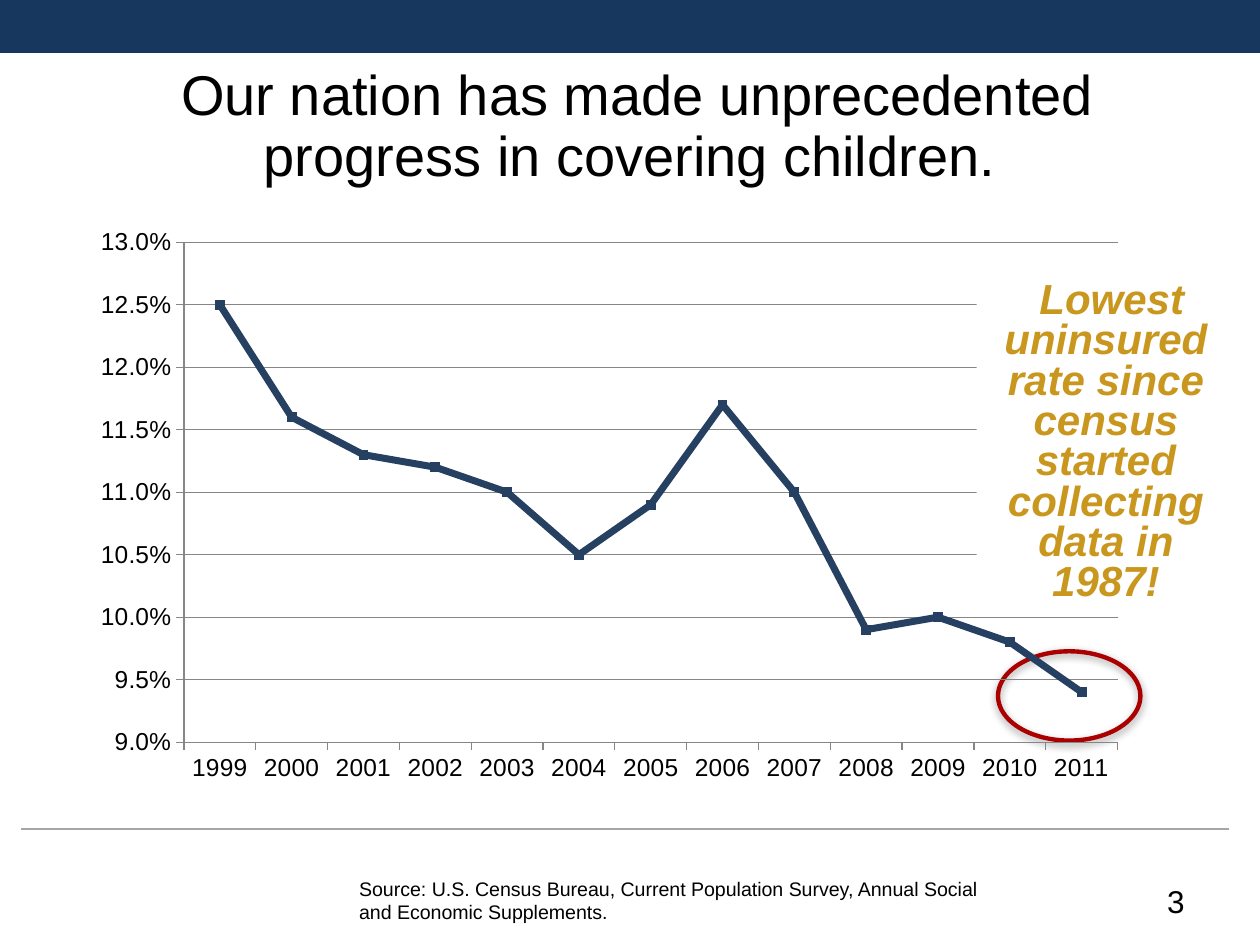
from dataclasses import dataclass

from lxml import etree
from pptx import Presentation
from pptx.chart.data import CategoryChartData
from pptx.dml.color import RGBColor
from pptx.enum.chart import XL_CHART_TYPE, XL_MARKER_STYLE, XL_TICK_MARK
from pptx.enum.shapes import MSO_CONNECTOR, MSO_SHAPE
from pptx.enum.text import MSO_ANCHOR, MSO_AUTO_SIZE, PP_ALIGN
from pptx.oxml import parse_xml
from pptx.oxml.ns import nsdecls, qn
from pptx.util import Cm, Pt

NAVY = RGBColor(0x17, 0x37, 0x5E)
BLUE = RGBColor(0x25, 0x40, 0x61)
GOLD = RGBColor(0xC9, 0x96, 0x1E)
RED = RGBColor(0xAA, 0x00, 0x00)
GRAY = RGBColor(0xA6, 0xA6, 0xA6)
AXIS = RGBColor(0x86, 0x86, 0x86)
BLACK = RGBColor(0, 0, 0)
WHITE = RGBColor(0xFF, 0xFF, 0xFF)

LEFT, CENTER, RIGHT = PP_ALIGN.LEFT, PP_ALIGN.CENTER, PP_ALIGN.RIGHT
TOP, MIDDLE = MSO_ANCHOR.TOP, MSO_ANCHOR.MIDDLE
RECT, OVAL = MSO_SHAPE.RECTANGLE, MSO_SHAPE.OVAL
LINE = XL_CHART_TYPE.LINE_MARKERS
SQUARE = XL_MARKER_STYLE.SQUARE
OUT, NONE = XL_TICK_MARK.OUTSIDE, XL_TICK_MARK.NONE
STRAIGHT = MSO_CONNECTOR.STRAIGHT
FIXED = MSO_AUTO_SIZE.NONE
FONT = "Arial"

YEARS = [str(year) for year in range(1999, 2012)]
RATES = [0.125, 0.116, 0.113, 0.112, 0.11, 0.105, 0.109,
         0.117, 0.11, 0.099, 0.1, 0.098, 0.094]


@dataclass(frozen=True)
class Box:
    left: float
    top: float
    width: float
    height: float

    def size(self) -> tuple:
        return Cm(self.left), Cm(self.top), Cm(self.width), Cm(self.height)


@dataclass(frozen=True)
class Label:
    text: str
    size: float
    color: RGBColor = BLACK
    align: PP_ALIGN = LEFT
    anchor: MSO_ANCHOR = TOP
    space: float = 1.0
    strong: bool = False


NOTES = [
    (Box(6.99, 17.55, 13.54, 1.07),
     Label("Source: U.S. Census Bureau, Current Population Survey, "
           "Annual Social and Economic Supplements.", 11.2)),
    (Box(18.21, 17.65, 5.92, 1.02), Label("3", 18, align=RIGHT)),
]
TITLE = Label(" Our nation has made unprecedented progress in covering children.",
              32, align=CENTER, anchor=MIDDLE, space=0.9)
CLAIM = Label(" Lowest uninsured rate since census started collecting data in 1987!",
              24, GOLD, CENTER, MIDDLE, 0.8, True)


def write(shape, label: Label) -> None:
    frame = shape.text_frame
    frame.text = label.text
    frame.word_wrap = True
    frame.auto_size = FIXED
    frame.vertical_anchor = label.anchor
    para = frame.paragraphs[0]
    para.alignment = label.align
    para.line_spacing = label.space
    font = para.runs[0].font
    font.name = FONT
    font.size = Pt(label.size)
    font.color.rgb = label.color
    font.bold = font.italic = label.strong


def add_rect(slide, box: Box, fill: RGBColor):
    rect = slide.shapes.add_shape(RECT, *box.size())
    rect.shadow.inherit = False
    rect.fill.solid()
    rect.fill.fore_color.rgb = fill
    rect.line.fill.background()
    return rect


def add_rule(slide, left: float, right: float, top: float) -> None:
    rule = slide.shapes.add_connector(STRAIGHT, Cm(left), Cm(top), Cm(right), Cm(top))
    rule.line.color.rgb = GRAY
    rule.line.width = Pt(0.75)
    etree.SubElement(rule._element.spPr, qn("a:effectLst"))


def add_ring(slide, box: Box) -> None:
    ring = slide.shapes.add_shape(OVAL, *box.size())
    ring.shadow.inherit = False
    ring.fill.background()
    ring.line.color.rgb = RED
    ring.line.width = Pt(2.5)
    ring._element.spPr.find(qn("a:effectLst")).append(parse_xml(
        f'<a:outerShdw {nsdecls("a")} blurRad="{Pt(5)}" dist="{Pt(1.6)}" '
        'dir="5400000" rotWithShape="0"><a:srgbClr val="000000">'
        '<a:alpha val="38000"/></a:srgbClr></a:outerShdw>'))


def set_plot(chart, box: Box) -> None:
    area = chart._chartSpace.chart.plotArea
    old = area.find(qn("c:layout"))
    if old is not None:
        area.remove(old)
    layout = etree.Element(qn("c:layout"))
    manual = etree.SubElement(layout, qn("c:manualLayout"))
    parts = [("layoutTarget", "inner"), ("xMode", "edge"), ("yMode", "edge"),
             ("x", box.left), ("y", box.top), ("w", box.width), ("h", box.height)]
    for name, value in parts:
        etree.SubElement(manual, qn(f"c:{name}")).set("val", str(value))
    area.insert(0, layout)


def add_trend(slide, box: Box) -> None:
    data = CategoryChartData(number_format="0.0%")
    data.categories = YEARS
    data.add_series("Series 1", RATES)
    chart = slide.shapes.add_chart(LINE, *box.size(), data).chart
    chart.has_legend = chart.has_title = False
    chart.font.name = FONT
    chart.font.size = Pt(14)
    chart.font.color.rgb = BLACK
    set_plot(chart, Box(0.114, 0.037, 0.88, 0.861))

    for axis in (chart.category_axis, chart.value_axis):
        axis.major_tick_mark = OUT
        axis.minor_tick_mark = NONE
        axis.format.line.color.rgb = AXIS
        axis.format.line.width = Pt(0.75)
    rate = chart.value_axis
    rate.minimum_scale, rate.maximum_scale, rate.major_unit = 0.09, 0.13, 0.005
    rate.tick_labels.number_format = "0.0%"
    rate.tick_labels.number_format_is_linked = False
    rate.has_major_gridlines = True
    rate.major_gridlines.format.line.color.rgb = AXIS
    rate.major_gridlines.format.line.width = Pt(0.75)

    chart.plots[0].vary_by_categories = False
    trend = chart.plots[0].series[0]
    trend.smooth = False
    trend.format.line.color.rgb = BLUE
    trend.format.line.width = Pt(4)
    mark = trend.marker
    mark.style = SQUARE
    mark.size = 5
    mark.format.fill.solid()
    mark.format.fill.fore_color.rgb = BLUE
    mark.format.line.color.rgb = BLUE


def main() -> None:
    deck = Presentation()
    deck.slide_width, deck.slide_height = Cm(25.4), Cm(19.05)
    slide = deck.slides.add_slide(deck.slide_layouts[5])

    add_rect(slide, Box(0, 0, 25.4, 1.07), NAVY)
    add_rule(slide, 0.43, 24.77, 16.71)
    add_ring(slide, Box(20.12, 13.13, 2.87, 1.8))

    title = slide.shapes.title
    title.left, title.top, title.width, title.height = Box(1.27, 1.14, 22.86, 2.87).size()
    write(title, TITLE)
    for box, label in NOTES:
        write(slide.shapes.add_textbox(*box.size()), label)

    add_trend(slide, Box(1.27, 4.45, 21.39, 11.71))
    write(add_rect(slide, Box(19.69, 5.51, 5.21, 6.86), WHITE), CLAIM)
    deck.save("out.pptx")


if __name__ == "__main__":
    main()
